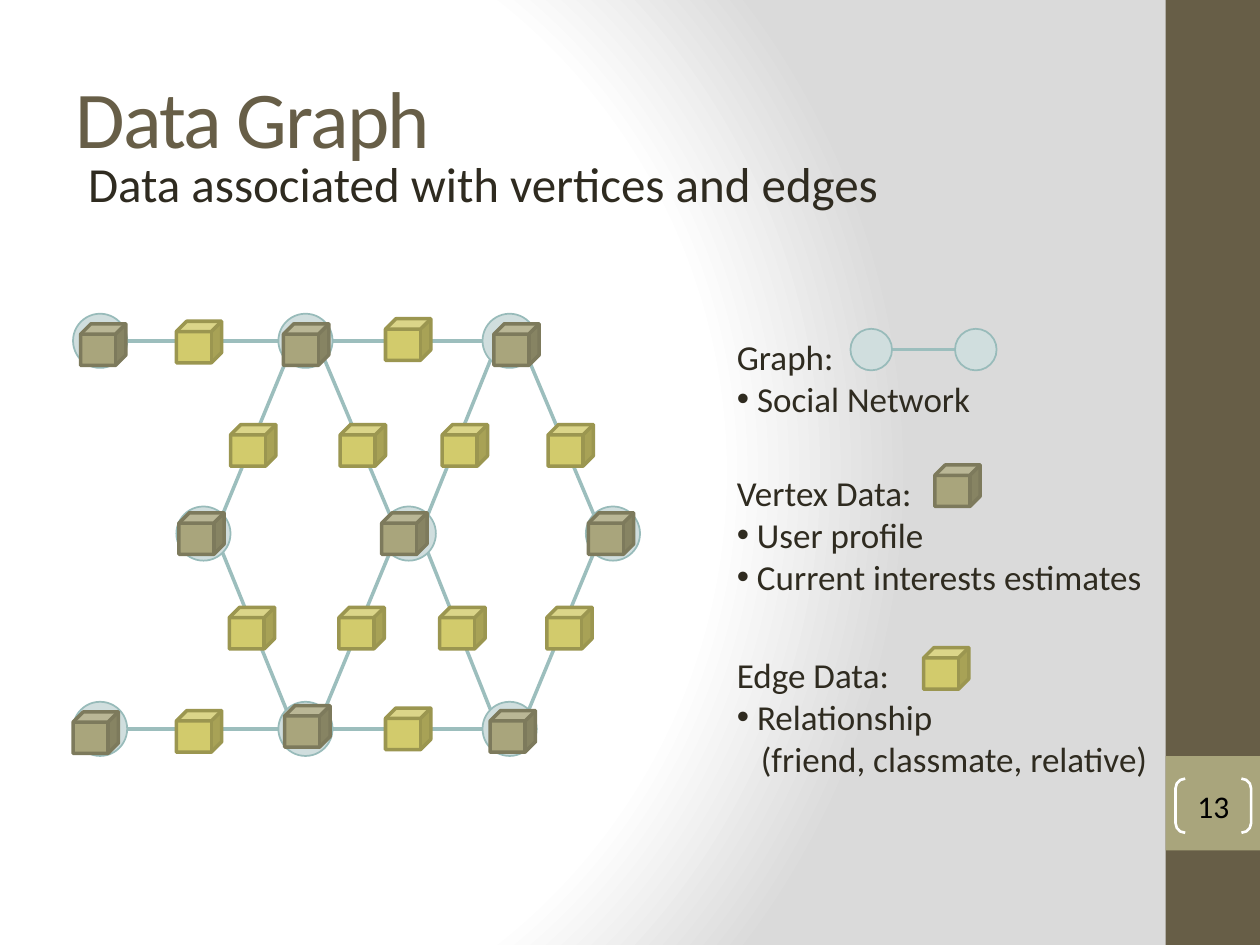
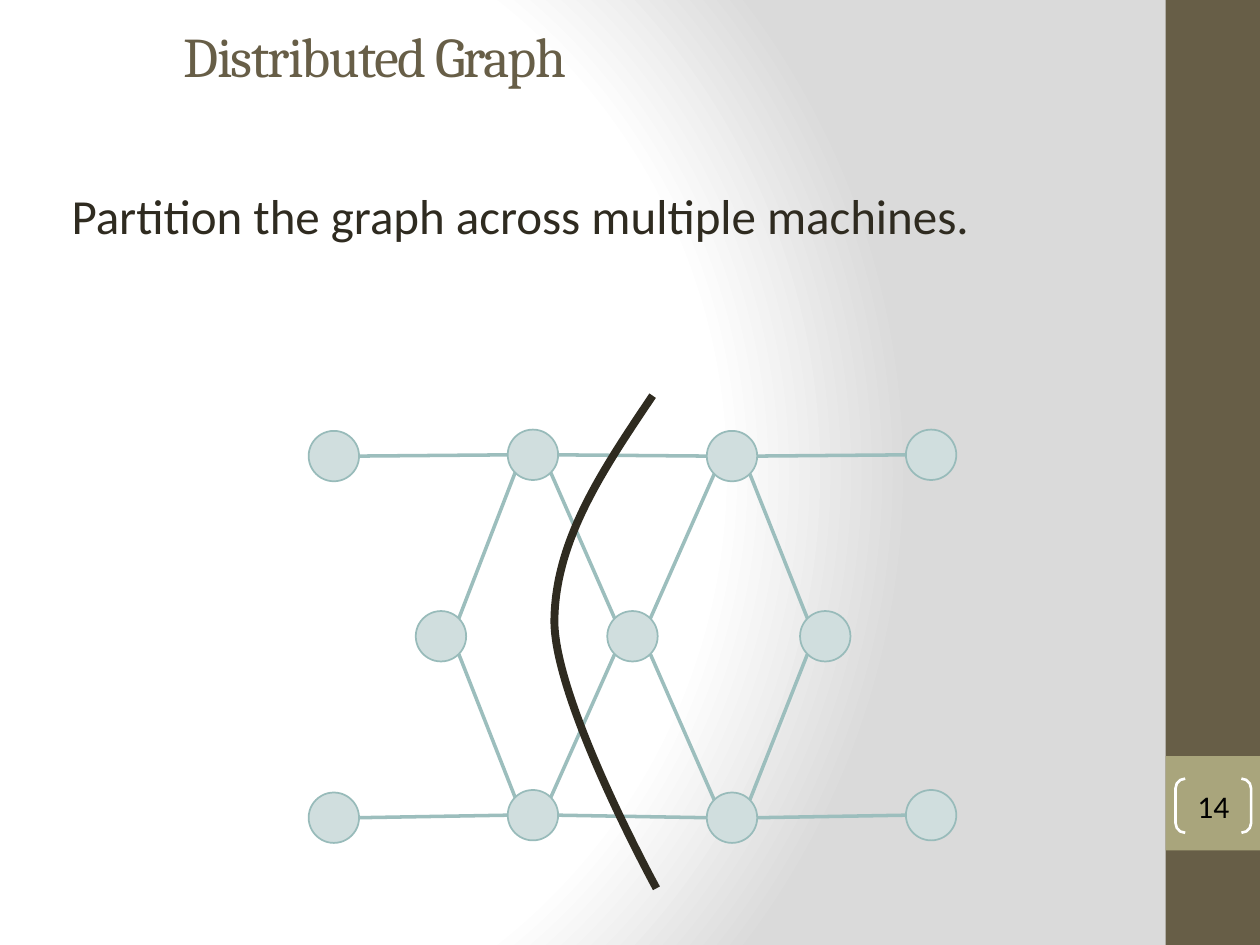
from lxml import etree
from pptx import Presentation
from pptx.dml.color import RGBColor
from pptx.enum.shapes import MSO_CONNECTOR as Connector, MSO_SHAPE as Preset
from pptx.enum.text import MSO_ANCHOR as Anchor, MSO_AUTO_SIZE as AutoSize, PP_ALIGN as Align
from pptx.oxml import parse_xml
from pptx.oxml.ns import nsdecls, qn
from pptx.util import Inches, Pt

# Colours
BROWN = RGBColor(0x67, 0x5E, 0x47)
OLIVE = RGBColor(0xA9, 0xA5, 0x7C)
OLIVE_EDGE = RGBColor(0x7D, 0x7A, 0x5C)
YELLOW = RGBColor(0xD2, 0xCB, 0x6C)
YELLOW_EDGE = RGBColor(0x9B, 0x96, 0x50)
PALE_TEAL = RGBColor(0xD0, 0xDE, 0xDE)
TEAL_EDGE = RGBColor(0x98, 0xBB, 0xBA)
TEAL = RGBColor(0x9C, 0xBE, 0xBD)
INK = RGBColor(0x2F, 0x2B, 0x20)
WHITE = RGBColor(0xFF, 0xFF, 0xFF)
BLACK = RGBColor(0, 0, 0)

VERTEX_DATA = (OLIVE, OLIVE_EDGE)
EDGE_DATA = (YELLOW, YELLOW_EDGE)
DIAGONAL = 0.5 ** 0.5

GRADIENT = f"""<a:gradFill {nsdecls('a')} rotWithShape="1"><a:gsLst>
<a:gs pos="0"><a:srgbClr val="FFFFFF"/></a:gs>
<a:gs pos="75000"><a:srgbClr val="FFFFFF"/></a:gs>
<a:gs pos="100000"><a:srgbClr val="DADADA"/></a:gs></a:gsLst>
<a:path path="circle"><a:fillToRect l="20000" t="50000" r="100000" b="50000"/></a:path>
</a:gradFill>"""


class GraphDeck:
    """Holds the shared style and the current slide."""

    def __init__(self):
        self.deck = Presentation()
        self.deck.slide_width, self.deck.slide_height = Inches(10), Inches(7.5)
        self.page = None
        # Radial background for every slide
        master = self.deck.slide_master
        master.background.fill.solid()
        solid = master.element.xpath("p:cSld/p:bg/p:bgPr/a:solidFill")[0]
        solid.getparent().replace(solid, parse_xml(GRADIENT))

    def new_page(self, title, place, size, font, number):
        self.page = self.deck.slides.add_slide(self.deck.slide_layouts[5])
        # Side band and page number
        self.shape(Preset.RECTANGLE, (9.25, 0, 0.75, 7.5), BROWN)
        self.shape(Preset.RECTANGLE, (9.25, 6, 0.75, 0.75), OLIVE)
        bracket = self.shape(Preset.DOUBLE_BRACKET, (9.33, 6.18, 0.6, 0.43), None, WHITE, 1.5)
        bracket.adjustments[0] = 0.179
        frame = bracket.text_frame
        frame.margin_left = frame.margin_right = frame.margin_top = frame.margin_bottom = 0
        frame.vertical_anchor = Anchor.MIDDLE
        frame.paragraphs[0].alignment = Align.CENTER
        self.span(frame.paragraphs[0], str(number), 18, BLACK)
        # Title
        box = self.page.shapes.title
        box.left, box.top, box.width, box.height = map(Inches, place)
        frame = box.text_frame
        frame.auto_size = AutoSize.NONE
        frame.vertical_anchor = Anchor.MIDDLE
        frame.paragraphs[0].alignment = Align.LEFT
        span = self.span(frame.paragraphs[0], title, size, BROWN, font)
        span.font._element.set("spc", "-100")

    def span(self, para, text, size, color, font="Calibri"):
        span = para.add_run()
        span.text = text
        span.font.size, span.font.name = Pt(size), font
        span.font.color.rgb = color
        return span

    def text(self, place, lines, size):
        """Each line is (text, indent, bulleted)."""
        box = self.page.shapes.add_textbox(*map(Inches, place))
        frame = box.text_frame
        frame.word_wrap = True
        frame.auto_size = AutoSize.SHAPE_TO_FIT_TEXT
        for index, (text, indent, bulleted) in enumerate(lines):
            para = frame.paragraphs[0] if index == 0 else frame.add_paragraph()
            self.span(para, text, size, INK)
            if indent:
                props = para._p.get_or_add_pPr()
                props.set("marL", str(Inches(indent)))
                props.set("indent", str(-Inches(indent) if bulleted else 0))
                if bulleted:
                    etree.SubElement(props, qn("a:buFont")).set("typeface", "Arial")
                    etree.SubElement(props, qn("a:buChar")).set("char", "•")

    def outline(self, shape, fill, line, width):
        shape.shadow.inherit = False
        if fill is None:
            shape.fill.background()
        else:
            shape.fill.solid()
            shape.fill.fore_color.rgb = fill
        if line is None:
            shape.line.fill.background()
        else:
            shape.line.color.rgb, shape.line.width = line, Pt(width)

    def shape(self, preset, place, fill, line=None, width=1):
        shape = self.page.shapes.add_shape(preset, *map(Inches, place))
        self.outline(shape, fill, line, width)
        return shape

    def cubes(self, kind, corners):
        fill, line = kind
        for left, top in corners:
            self.shape(Preset.CUBE, (left, top, 0.36, 0.33), fill, line, 2)

    def vertices(self, corners, size):
        for left, top in corners:
            self.shape(Preset.OVAL, (left, top, size, size), PALE_TEAL, TEAL_EDGE)

    def edge(self, start, end, size):
        """Line between the rims of two vertices, level or on the diagonals."""
        level = abs(start[1] - end[1]) < size
        reach = size / 2 * (1 if level else DIAGONAL)
        across = reach if end[0] > start[0] else -reach
        down = 0 if level else reach if end[1] > start[1] else -reach
        ends = (start[0] + across, start[1] + down, end[0] - across, end[1] - down)
        line = self.page.shapes.add_connector(
            Connector.STRAIGHT, *(Inches(value + size / 2) for value in ends))
        line.line.color.rgb, line.line.width = TEAL, Pt(2)
        etree.SubElement(line.element.spPr, qn("a:effectLst"))

    def chain(self, row, size):
        for start, end in zip(row, row[1:]):
            self.edge(start, end, size)
        self.vertices(row, size)

    def graph(self, top, middle, bottom, size):
        for row in (top, bottom):
            for mid, outer in ((0, 1), (1, 1), (1, 2), (2, 2)):
                self.edge(middle[mid], row[outer], size)
            self.chain(row, size)
        self.vertices(middle, size)

    def curve(self, points, color, width):
        """Bezier curve: a start point, then three points per segment."""
        points = [(Inches(x), Inches(y)) for x, y in points]
        builder = self.page.shapes.build_freeform(*points[0])
        builder.add_line_segments(points[1:], close=False)
        shape = builder.convert_to_shape()
        steps = shape.element.xpath(".//a:lnTo")
        for first in range(0, len(steps), 3):
            bezier = etree.Element(qn("a:cubicBezTo"))
            steps[first].addprevious(bezier)
            for step in steps[first:first + 3]:
                bezier.append(step[0])
                step.getparent().remove(step)
        self.outline(shape, None, color, width)


def row_at(top, lefts):
    return [(left, top) for left in lefts]


def data_graph(show):
    show.new_page("Data Graph", (0.5, 0.3, 8.33, 1.25), 46, "Calibri", 13)
    show.text((0.6, 1.17, 9.48, 0.57), [("Data associated with vertices and edges", 0, False)], 28)

    # Graph with data on vertices and edges
    outer = (0.58, 2.21, 3.83)
    show.graph(row_at(2.49, outer), row_at(4.02, (1.4, 3.03, 4.65)), row_at(5.57, outer), 0.43)
    show.cubes(VERTEX_DATA, row_at(2.57, (0.64, 2.25, 3.92)) + row_at(4.07, (1.42, 3.03, 4.67))
               + [(0.58, 5.65), (2.26, 5.6), (3.89, 5.64)])
    show.cubes(EDGE_DATA, [(1.4, 2.55), (3.06, 2.53), (1.4, 5.64), (3.06, 5.62)]
               + row_at(3.37, (1.83, 2.7, 3.51, 4.35))
               + row_at(4.82, (1.82, 2.69, 3.49, 4.34)))

    # Legend
    legend = [
        (2.61, 3.92, 0.77, [("Graph:", 0, False), ("Social Network", 0.16, True)]),
        (3.69, 4, 1.11, [("Vertex Data:", 0, False), ("User profile", 0.16, True),
                         ("Current interests estimates", 0.16, True)]),
        (5.14, 3.92, 1.11, [("Edge Data:", 0, False), ("Relationship", 0.16, True),
                            ("(friend, classmate, relative)", 0.19, False)]),
    ]
    for top, width, height, lines in legend:
        show.text((5.75, top, width, height), lines, 20)
    show.chain(row_at(2.61, (6.75, 7.58)), 0.33)
    show.cubes(VERTEX_DATA, [(7.42, 3.69)])
    show.cubes(EDGE_DATA, [(7.33, 5.14)])


def distributed_graph(show):
    show.new_page("Distributed Graph", (1.36, 0.02, 8.82, 0.83), 32, "Cambria", 14)
    show.text((0.47, 1.42, 8.74, 0.57),
              [("Partition the graph across multiple machines.", 0, False)], 28)

    # Graph and the cut between the machines
    top = [(2.45, 3.42), (4.03, 3.41), (5.61, 3.42), (7.19, 3.41)]
    bottom = [(2.45, 6.29), (4.03, 6.27), (5.61, 6.29), (7.19, 6.27)]
    show.graph(top, row_at(4.85, (3.3, 4.82, 6.35)), bottom, 0.4)
    show.curve([(5.18, 3.14), (4.79, 3.72), (4.4, 4.29), (4.4, 4.94),
                (4.41, 5.59), (5.21, 7.05), (5.21, 7.05)], INK, 4.5)


def main():
    show = GraphDeck()
    data_graph(show)
    distributed_graph(show)
    show.deck.save("out.pptx")


if __name__ == "__main__":
    main()
